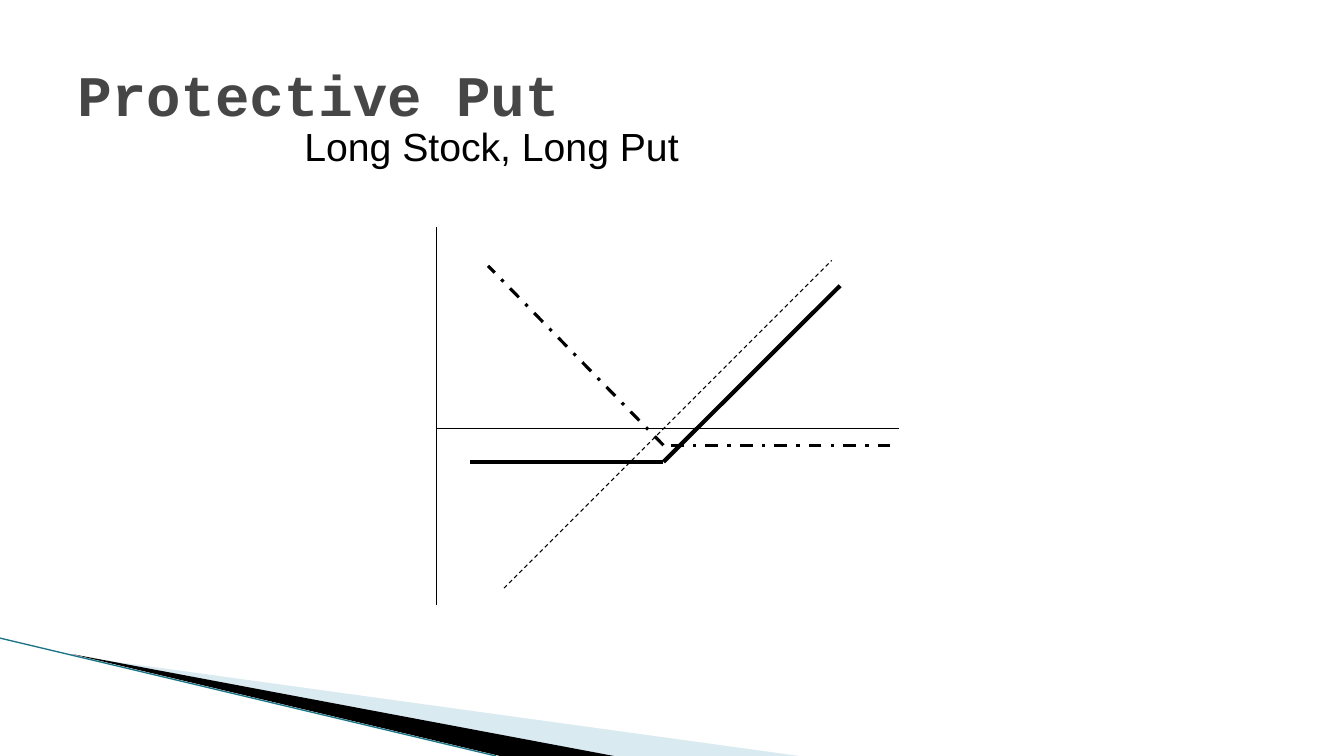
from dataclasses import dataclass
from typing import Optional

from lxml.etree import SubElement
from pptx import Presentation
from pptx.dml.color import RGBColor as Rgb
from pptx.enum.dml import MSO_LINE_DASH_STYLE as Dash
from pptx.enum.shapes import MSO_CONNECTOR as Link
from pptx.enum.text import MSO_ANCHOR as Anchor
from pptx.oxml.ns import qn
from pptx.util import Cm, Pt

Point = tuple[float, float]


@dataclass(frozen=True)
class Theme:
    ink: str = "000000"
    title: str = "464646"
    pale: str = "A0CBDC"
    teal: str = "1B7587"
    mono: str = "Courier New"
    sans: str = "Arial"
    big: float = 41
    small: float = 28
    thin: float = 0.75
    mid: float = 2.25
    thick: float = 3


@dataclass(frozen=True)
class Trace:
    """A run of straight lines through points in cm."""
    points: tuple[Point, ...]
    width: float
    color: str
    dash: Optional[Dash] = None


@dataclass(frozen=True)
class Wedge:
    points: tuple[Point, ...]
    color: str
    alpha: int = 100


@dataclass(frozen=True)
class Label:
    text: str
    box: tuple[float, float, float, float]
    font: str
    size: float
    color: str
    bold: bool = False
    anchor: Anchor = Anchor.TOP


def draw_trace(shapes, trace: Trace) -> None:
    for start, end in zip(trace.points, trace.points[1:]):
        line = shapes.add_connector(Link.STRAIGHT, *map(Cm, start + end))
        line.line.color.rgb = Rgb.from_string(trace.color)
        line.line.width = Pt(trace.width)
        if trace.dash is not None:
            line.line.dash_style = trace.dash
        SubElement(line._element.spPr, qn("a:effectLst"))


def draw_wedge(shapes, wedge: Wedge) -> None:
    first, *rest = [(Cm(x), Cm(y)) for x, y in wedge.points]
    pen = shapes.build_freeform(*first)
    pen.add_line_segments(rest, close=True)
    shape = pen.convert_to_shape()
    shape.shadow.inherit = False
    shape.line.fill.background()
    shape.fill.solid()
    shape.fill.fore_color.rgb = Rgb.from_string(wedge.color)
    if wedge.alpha < 100:
        tint = shape._element.spPr.find(f"{qn('a:solidFill')}/{qn('a:srgbClr')}")
        SubElement(tint, qn("a:alpha"), val=str(wedge.alpha * 1000))


def draw_label(shapes, label: Label) -> None:
    frame = shapes.add_textbox(*map(Cm, label.box)).text_frame
    frame.word_wrap = True
    frame.vertical_anchor = label.anchor
    frame.text = label.text
    font = frame.paragraphs[0].runs[0].font
    font.name, font.size, font.bold = label.font, Pt(label.size), label.bold
    font.color.rgb = Rgb.from_string(label.color)


def main() -> None:
    theme = Theme()
    deck = Presentation()
    deck.slide_width, deck.slide_height = Cm(33.87), Cm(19.05)
    shapes = deck.slides.add_slide(deck.slide_layouts[6]).shapes
    base = 19.05

    # Corner decoration
    wedges = (
        Wedge(((1.85, 16.53), (20.14, base), (15.44, base)), theme.pale, 40),
        Wedge(((1.8, 16.48), (15.47, base), (12.6, base)), theme.ink),
    )
    for wedge in wedges:
        draw_wedge(shapes, wedge)
    draw_trace(shapes, Trace(((0, 16.08), (12.5, base)), 0.95, theme.teal))

    # Headings
    labels = (
        Label("Protective Put", (1.7, 0.76, 30.48, 3.18), theme.mono,
              theme.big, theme.title, True, Anchor.MIDDLE),
        Label("Long Stock, Long Put", (7.42, 2.97, 19.89, 1.45), theme.sans,
              theme.small, theme.ink),
    )
    for label in labels:
        draw_label(shapes, label)

    # Payoff diagram: axes, stock, put, combined position
    left, zero, strike = 11.01, 10.8, 16.72
    put, floor = 11.22, 11.64
    traces = (
        Trace(((left, 5.72), (left, 15.24)), theme.thin, theme.ink),
        Trace(((left, zero), (22.65, zero)), theme.thin, theme.ink),
        Trace(((12.7, 14.82), (20.96, 6.56)), theme.thin, theme.ink, Dash.DASH),
        Trace(((22.44, put), (strike, put), (12.3, 6.7)), theme.mid, theme.ink,
              Dash.DASH_DOT),
        Trace(((21.17, 7.2), (strike, floor), (11.85, floor)), theme.thick,
              theme.ink),
    )
    for trace in traces:
        draw_trace(shapes, trace)

    deck.save("out.pptx")


if __name__ == "__main__":
    main()
